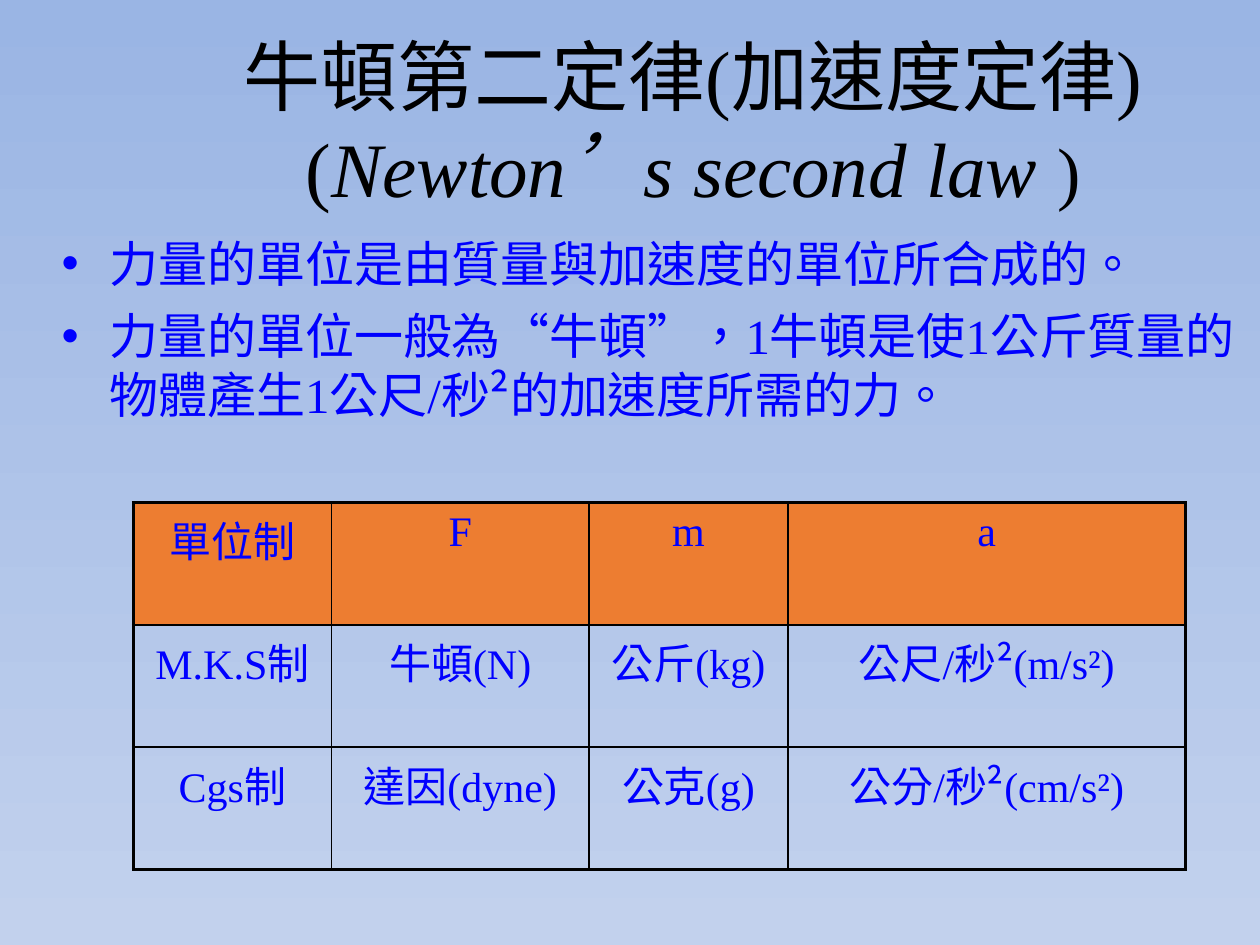
from lxml.etree import SubElement
from pptx import Presentation
from pptx.dml.color import RGBColor
from pptx.enum.text import MSO_ANCHOR as Anchor, MSO_AUTO_SIZE as AutoSize, PP_ALIGN as Align
from pptx.oxml.ns import qn
from pptx.util import Inches, Pt

BLACK = RGBColor(0x00, 0x00, 0x00)
BLUE = RGBColor(0x00, 0x00, 0xFF)
ORANGE = RGBColor(0xED, 0x7D, 0x31)
SKY_TOP = RGBColor(0x9A, 0xB5, 0xE4)
SKY_BOTTOM = RGBColor(0xC2, 0xD1, 0xED)
FONT = "Times New Roman"
WIDTH, HEIGHT = Inches(10), Inches(7.5)
THIN, THICK = Pt(1), Pt(2.25)

TITLE_BOX = (0.15, 0.044, 0.8, 0.167)
BODY_BOX = (0.039, 0.24, 0.961, 0.428)
TABLE_BOX = (0.106, 0.532, 0.835, 0.388)
COLUMN_SHARES = (0.188, 0.245, 0.189, 0.378)

POINTS = (
    "力量的單位是由質量與加速度的單位所合成的。",
    "力量的單位一般為“牛頓”，1牛頓是使1公斤質量的物體產生1公尺/秒²的加速度所需的力。",
)
UNITS = (
    ("單位制", "F", "m", "a"),
    ("M.K.S制", "牛頓(N)", "公斤(kg)", "公尺/秒²(m/s²)"),
    ("Cgs制", "達因(dyne)", "公克(g)", "公分/秒²(cm/s²)"),
)


def place(shares):
    """Turn shares of the slide into left, top, width and height."""
    return [int(share * side) for share, side in zip(shares, (WIDTH, HEIGHT) * 2)]


def add_text(para, text, size=28, color=BLUE, italic=False):
    """Append one formatted span to a paragraph."""
    span = para.add_run()
    span.text = text
    span.font.name, span.font.size = FONT, Pt(size)
    span.font.color.rgb, span.font.italic = color, italic
    span.font._element.set("lang", "zh-TW")


def add_bullet(para, indent):
    """Give a paragraph a round bullet with a hanging indent."""
    settings = para._p.get_or_add_pPr()
    settings.set("marL", str(indent))
    settings.set("indent", str(-indent))
    SubElement(settings, qn("a:buFont"), typeface="Arial")
    SubElement(settings, qn("a:buChar"), char="•")


def set_border(cell, side, width):
    """Draw one black edge of a cell; side is L, R, T or B."""
    line = SubElement(cell._tc.get_or_add_tcPr(), qn(f"a:ln{side}"), w=str(width))
    fill = SubElement(line, qn("a:solidFill"))
    SubElement(fill, qn("a:srgbClr"), val=str(BLACK))


def fill_background(page):
    """Shade the page from top to bottom."""
    fill = page.background.fill
    fill.gradient()
    fill.gradient_angle = 270
    for stop, color in zip(fill.gradient_stops, (SKY_TOP, SKY_BOTTOM)):
        stop.color.rgb = color


def build_title(page, shares):
    """Write the two-line heading in the title placeholder."""
    title = page.shapes.title
    title.left, title.top, title.width, title.height = place(shares)
    frame = title.text_frame
    frame.auto_size, frame.vertical_anchor = AutoSize.NONE, Anchor.MIDDLE
    para = frame.paragraphs[0]
    para.alignment = Align.CENTER
    add_text(para, "牛頓第二定律(加速度定律)", size=44, color=BLACK)
    para.add_line_break()
    add_text(para, "(", size=44, color=BLACK)
    add_text(para, "Newton’s second law ", size=44, color=BLACK, italic=True)
    add_text(para, ")", size=40, color=BLACK)


def build_points(page, shares):
    """Write the bulleted statements."""
    frame = page.shapes.add_textbox(*place(shares)).text_frame
    frame.word_wrap = True
    for index, text in enumerate(POINTS):
        para = frame.add_paragraph() if index else frame.paragraphs[0]
        add_bullet(para, Inches(0.38))
        para.space_before = Pt(8 if index else 0)
        add_text(para, text)


def build_units(page, shares):
    """Build the table of unit systems with a heavy outer frame."""
    left, top, width, height = place(shares)
    rows, columns = len(UNITS), len(COLUMN_SHARES)
    table = page.shapes.add_table(rows, columns, left, top, width, height).table
    table.horz_banding = table.first_row = False
    for column, share in zip(table.columns, COLUMN_SHARES):
        column.width = int(width * share)
    for r, texts in enumerate(UNITS):
        for c, text in enumerate(texts):
            cell = table.cell(r, c)
            outer = {"L": c == 0, "R": c == columns - 1, "T": r == 0, "B": r == rows - 1}
            for side, is_outer in outer.items():
                set_border(cell, side, THICK if is_outer else THIN)
            if r == 0:
                cell.fill.solid()
                cell.fill.fore_color.rgb = ORANGE
            else:
                cell.fill.background()
            para = cell.text_frame.paragraphs[0]
            para.alignment = Align.CENTER
            add_text(para, text, size=24)


def main():
    """Build the slide and save the deck."""
    deck = Presentation()
    deck.slide_width, deck.slide_height = WIDTH, HEIGHT
    page = deck.slides.add_slide(deck.slide_layouts[5])
    fill_background(page)
    build_title(page, TITLE_BOX)
    build_points(page, BODY_BOX)
    build_units(page, TABLE_BOX)
    deck.save("out.pptx")


if __name__ == "__main__":
    main()
